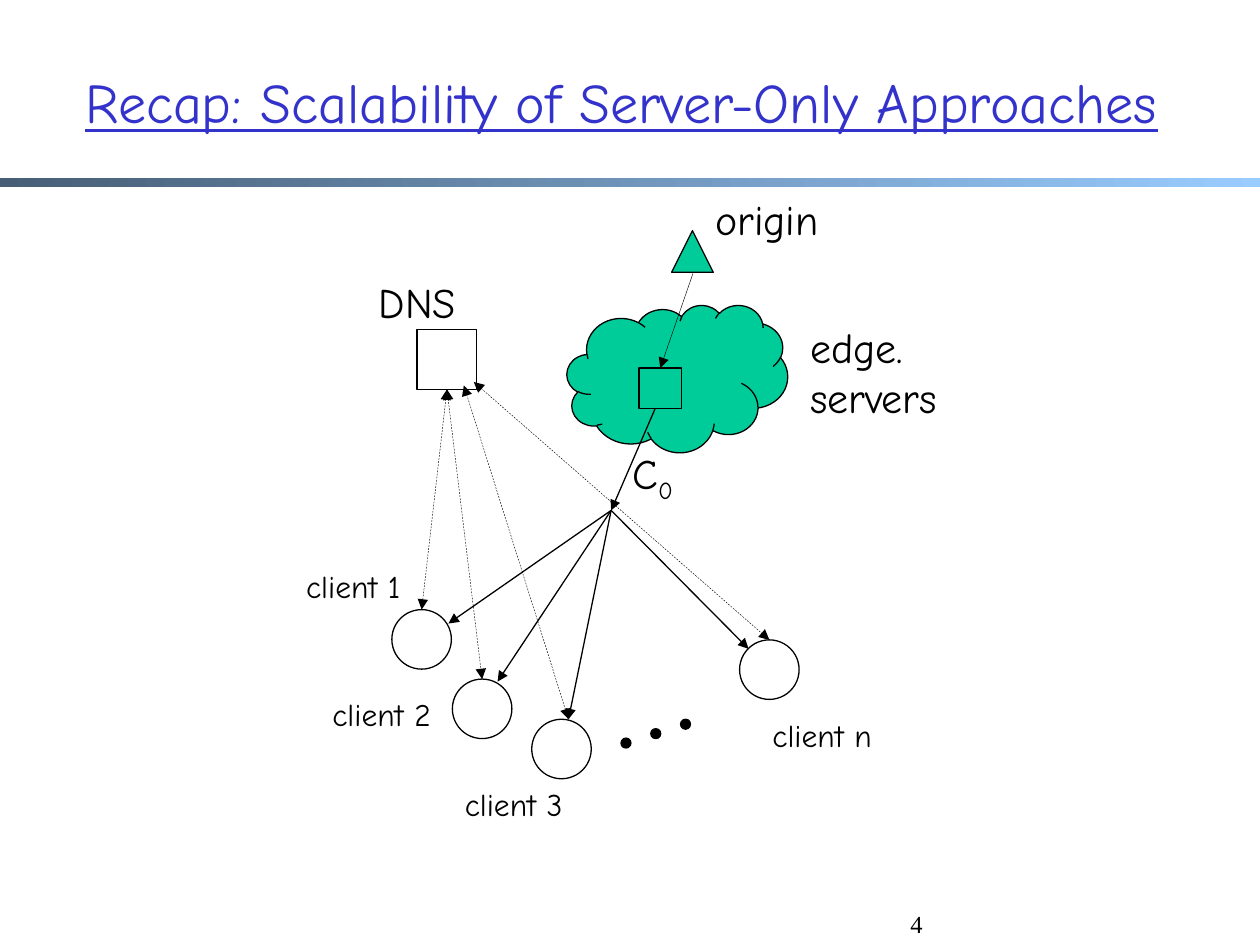
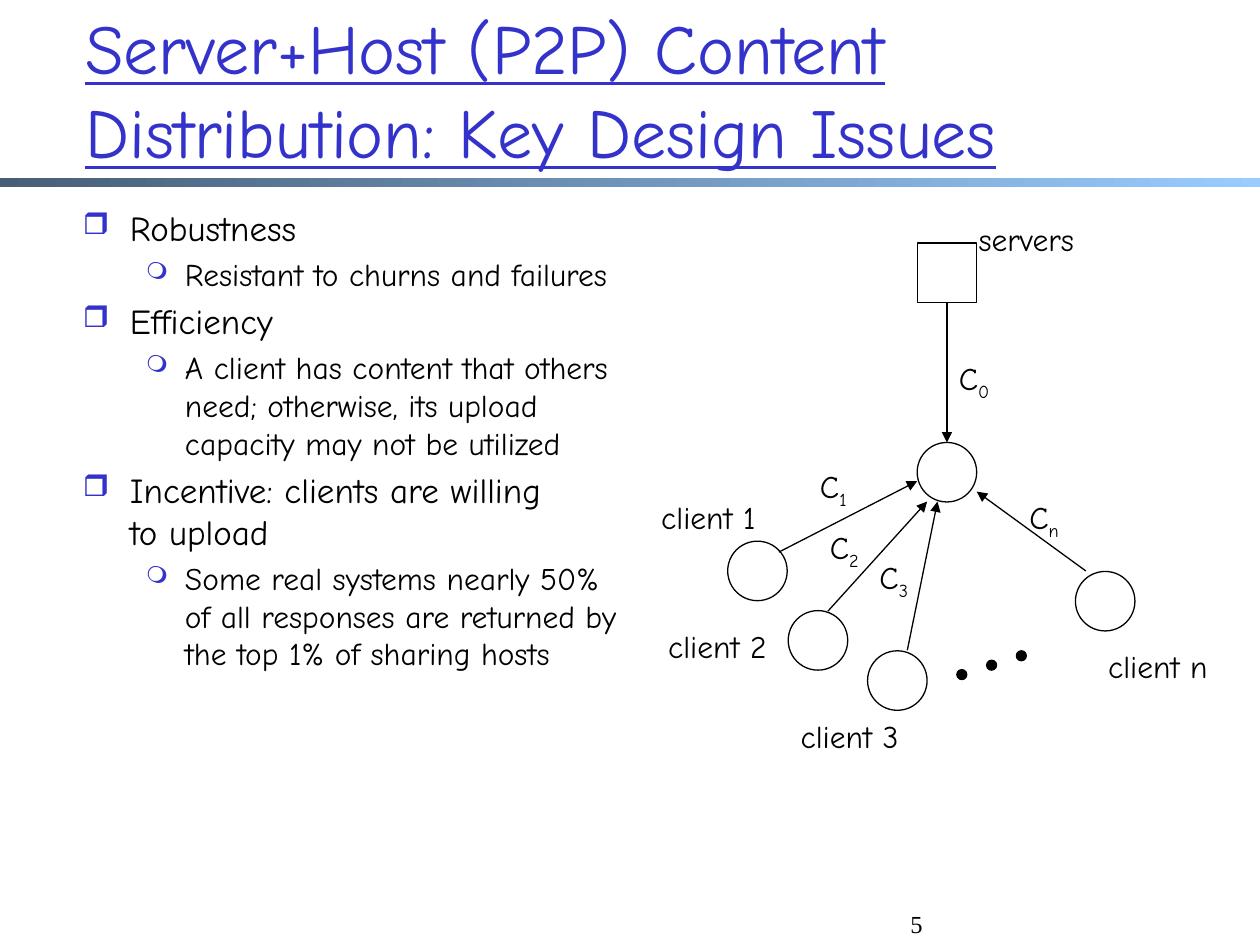
from lxml.etree import SubElement
from pptx import Presentation
from pptx.dml.color import RGBColor
from pptx.enum.dml import MSO_LINE
from pptx.enum.shapes import MSO_CONNECTOR, MSO_SHAPE
from pptx.enum.text import MSO_ANCHOR, PP_ALIGN
from pptx.oxml.ns import qn
from pptx.util import Cm, Pt

INK, BLUE, GREEN = "000000", "3333CC", "00CC99"
SANS, SERIF = "Comic Neue", "Times New Roman"
RECT, ROUND = MSO_SHAPE.RECTANGLE, MSO_SHAPE.OVAL
NODE = 1.2  # side of a node in cm
rgb = RGBColor.from_string


def frame(page, x, y, w, h, anchor=MSO_ANCHOR.TOP):
    """Add a wrapping text box and return its text frame."""
    body = page.shapes.add_textbox(Cm(x), Cm(y), Cm(w), Cm(h)).text_frame
    body.word_wrap = True
    body.vertical_anchor = anchor
    return body


def write(para, text, size=18, color=INK, font=SANS, line=False, align=None):
    """Fill a paragraph; "_" starts a subscript, a newline breaks the line."""
    para.alignment = align
    for row, part in enumerate(text.split("\n")):
        if row:
            para.add_line_break()
        for sub, piece in enumerate(part.split("_")):
            run = para.add_run()
            run.text = piece
            run.font.size, run.font.name = Pt(size), font
            run.font.color.rgb = rgb(color)
            run.font.underline = line
            if sub:
                run._r.get_or_add_rPr().set("baseline", "-25000")


# Line styles: width, dashed, arrowheads
STYLES = {
    "flow": (0.75, False, ["tailEnd"]),
    "fetch": (0.25, False, ["tailEnd"]),
    "query": (0.25, True, ["headEnd", "tailEnd"]),
}

# Bullets by level: sign, size in %, left and hanging indent in cm, text size
BULLETS = [("❒", 85, 0.95, 0.95, 20), ("❍", 75, 2.06, 0.79, 18)]

# Client group, placed as on the first slide
CLIENTS = [
    ("client 1", 7.9, 12.29, 5.92, 11.3),
    ("client 2", 9.12, 13.69, 6.45, 13.89),
    ("client 3", 10.72, 14.5, 9.12, 15.7),
    ("client n", 14.91, 12.9, 15.32, 14.3),
]
DOTS = [(12.52 + 0.6 * i, 14.88 - 0.19 * i) for i in range(3)]

HUB = (12.32, 10.29)
PAGES = [
    {
        "title": "Recap: Scalability of Server-Only Approaches",
        "place": (1.47, 0.84, 23.06, 2.41), "size": 32, "number": "4",
        "shift": (0, 0), "nudge": 0,
        "nodes": [
            ("cloud", MSO_SHAPE.CLOUD, 11.43, 6.15, 4.45, 2.97, GREEN),
            ("edge", RECT, 12.88, 7.42, 0.86, 0.81, None),
            ("dns", RECT, 8.41, 6.65, NODE, NODE, None),
            ("origin", MSO_SHAPE.ISOSCELES_TRIANGLE, 13.54, 4.65, 0.84, 0.84, GREEN),
        ],
        "lines": [
            ("flow", (13.21, 8.23), HUB),
            ("flow", HUB, (9.04, 12.57)),
            ("flow", HUB, (10.03, 13.74)),
            ("flow", HUB, (11.46, 14.5)),
            ("flow", HUB, (15.09, 13.08)),
            ("query", "dns", "client 1"),
            ("query", "dns", "client 2"),
            ("query", (9.35, 7.77), (11.46, 14.5)),
            ("query", (9.55, 7.7), "client n"),
            ("fetch", (13.97, 5.51), "edge"),
        ],
        "labels": [
            ("edge. servers", 16.08, 6.35, 4.11, 24),
            ("C_0", 12.5, 8.89, 1.8, 24),
            ("DNS", 7.39, 5.44, 3.4, 24),
            ("origin", 14.17, 3.78, 4.11, 24),
        ],
        "points": [],
    },
    {
        "title": "Server+Host (P2P) Content Distribution: Key Design Issues",
        "place": (1.47, 0.2, 21.59, 3.18), "size": 40, "number": "5",
        "shift": (6.77, -1.38), "nudge": 0.39,
        "nodes": [
            ("server", RECT, 18.49, 4.9, NODE, NODE, None),
            ("peer", ROUND, 18.49, 8.92, NODE, NODE, None),
        ],
        "lines": [
            ("flow", "server", "peer"),
            ("flow", (15.7, 11.13), (18.49, 9.7)),
            ("flow", (16.69, 12.32), (18.69, 10.11)),
            ("flow", (18.29, 13.11), (18.9, 10.11)),
            ("flow", (21.89, 11.51), (19.69, 9.91)),
        ],
        "labels": [
            ("servers", 19.48, 4.32, 3.4, 18),
            ("C_0", 19.08, 7.11, 1.8, 18),
            ("C_1", 16.28, 9.3, 1.8, 18),
            ("C_2", 16.48, 10.52, 1.8, 18),
            ("C_3", 17.48, 11.13, 1.8, 18),
            ("C_n", 20.5, 9.91, 1.8, 18),
        ],
        "points": [
            (0, "Robustness"),
            (1, "Resistant to churns and failures"),
            (0, "Efficiency"),
            (1, "A client has content that others need; otherwise, "
                "its upload capacity may not be utilized"),
            (0, "Incentive: clients are willing\nto upload"),
            (1, "Some real systems nearly 50% of all responses are "
                "returned by the top 1% of sharing hosts"),
        ],
    },
]

deck = Presentation()
deck.slide_width, deck.slide_height = Cm(25.4), Cm(19.05)

for data in PAGES:
    page = deck.slides.add_slide(deck.slide_layouts[6])

    # Band, title and page number
    band = page.shapes.add_shape(RECT, 0, Cm(3.58), deck.slide_width, Cm(0.2))
    band.shadow.inherit = False
    band.line.fill.background()
    band.fill.gradient()
    band.fill.gradient_angle = 0
    for stop, color in zip(band.fill.gradient_stops, ["475E76", "99CCFF"]):
        stop.color.rgb = rgb(color)
    head = frame(page, *data["place"], anchor=MSO_ANCHOR.MIDDLE)
    write(head.paragraphs[0], data["title"], size=data["size"], color=BLUE, line=True)
    foot = frame(page, 7.85, 17.78, 11, 1.27, anchor=MSO_ANCHOR.BOTTOM)
    write(foot.paragraphs[0], data["number"], size=14, font=SERIF, align=PP_ALIGN.RIGHT)

    # Bullet list
    if data["points"]:
        body = frame(page, 1.42, 4.04, 11.28, 13.84)
    for i, (level, text) in enumerate(data["points"]):
        sign, scale, left, hang, size = BULLETS[level]
        para = body.add_paragraph() if i else body.paragraphs[0]
        para.level = level
        para.space_before = Pt(size * 0.2)
        write(para, text, size=size)
        prop = para._p.get_or_add_pPr()
        prop.set("marL", str(Cm(left)))
        prop.set("indent", str(-Cm(hang)))
        tint = SubElement(prop, qn("a:buClr"))
        SubElement(tint, qn("a:srgbClr")).set("val", BLUE)
        SubElement(prop, qn("a:buSzPct")).set("val", str(scale * 1000))
        SubElement(prop, qn("a:buChar")).set("char", sign)

    # Nodes, clients and dots
    dx, dy = data["shift"]
    nodes = list(data["nodes"])
    nodes += [(name, ROUND, x + dx, y + dy, NODE, NODE, None)
              for name, x, y, *_ in CLIENTS]
    nodes += [("dot", ROUND, x + dx, y + dy, 0.2, 0.2, INK) for x, y in DOTS]
    made = {}
    for name, kind, x, y, w, h, fill in nodes:
        node = page.shapes.add_shape(kind, Cm(x), Cm(y), Cm(w), Cm(h))
        node.shadow.inherit = False
        node.line.color.rgb, node.line.width = rgb(INK), Pt(0.75)
        if fill:
            node.fill.solid()
            node.fill.fore_color.rgb = rgb(fill)
        else:
            node.fill.background()
        made[name] = node

    # Arrows: a name joins the bottom of its start or the top of its end
    for style, start, end in data["lines"]:
        width, dashed, tips = STYLES[style]
        a, b = [(0, 0) if isinstance(p, str) else p for p in (start, end)]
        link = page.shapes.add_connector(
            MSO_CONNECTOR.STRAIGHT, Cm(a[0]), Cm(a[1]), Cm(b[0]), Cm(b[1]))
        if start in made:
            link.begin_connect(made[start], 2)
        if end in made:
            link.end_connect(made[end], 0)
        link.line.color.rgb, link.line.width = rgb(INK), Pt(width)
        if dashed:
            link.line.dash_style = MSO_LINE.DASH
        for tip in tips:
            SubElement(link.line._get_or_add_ln(), qn("a:" + tip)).set("type", "triangle")
        SubElement(link._element.spPr, qn("a:effectLst"))

    # Labels
    labels = list(data["labels"])
    for i, (name, _, _, x, y) in enumerate(CLIENTS):
        nudge = 0 if i else data["nudge"]
        labels.append((name, x + dx + nudge, y + dy, 2.79, 18))
    for text, x, y, w, size in labels:
        write(frame(page, x, y, w, 1.02).paragraphs[0], text, size=size)

deck.save("out.pptx")
